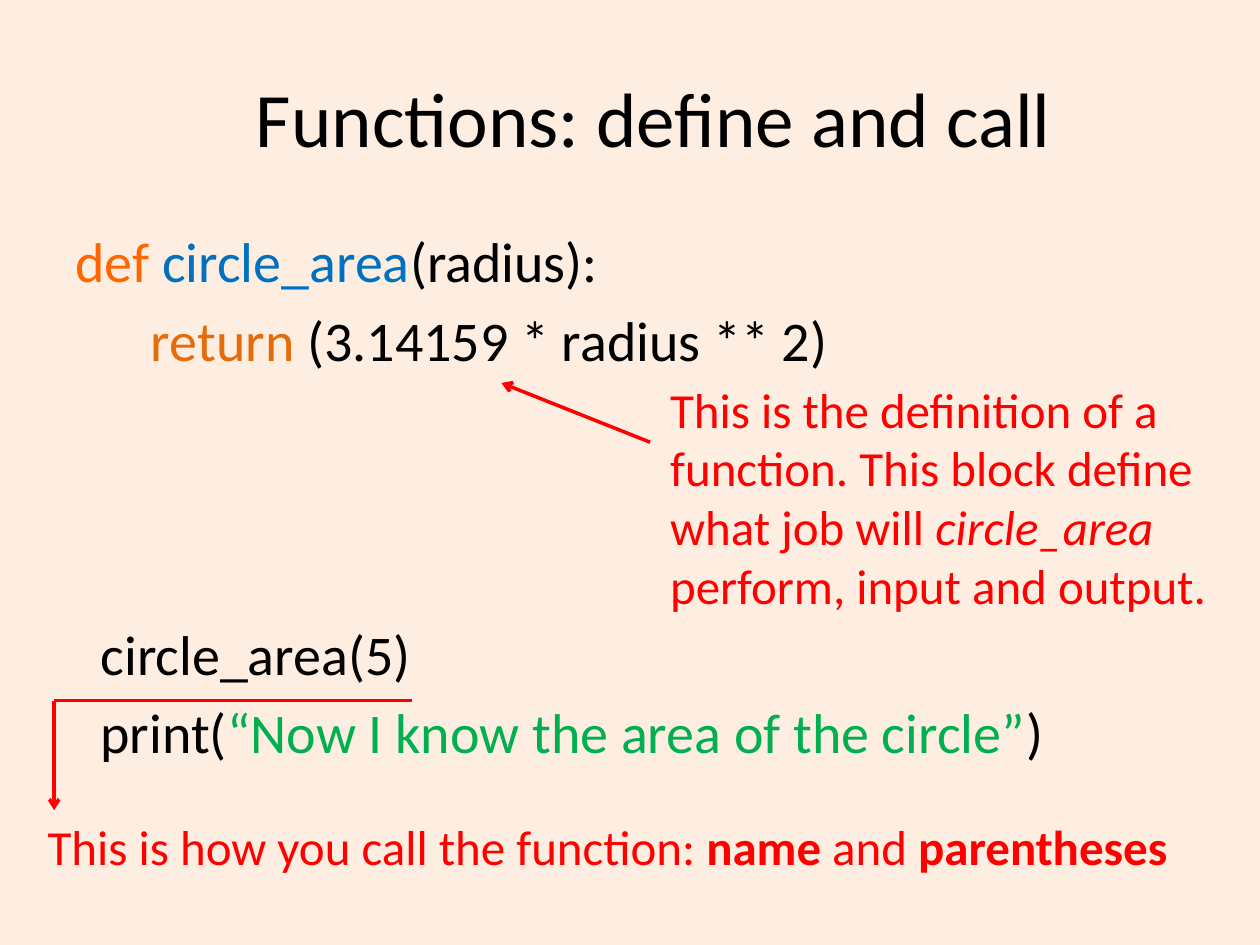
"""Build a slide on defining and calling a function."""
import pptx
import pptx.dml.color
import pptx.enum.shapes
import pptx.enum.text
import pptx.util
from dataclasses import dataclass
from lxml import etree

Inches = pptx.util.Inches
Pt = pptx.util.Pt
Align = pptx.enum.text.PP_ALIGN
Anchor = pptx.enum.text.MSO_ANCHOR
A = "{http://schemas.openxmlformats.org/drawingml/2006/main}"


@dataclass(frozen=True)
class Theme:
    font: str = "Calibri"
    ground: str = "FEEEE1"
    ink: str = "000000"
    define: str = "FF6600"
    keyword: str = "E46C0A"
    name: str = "0070C0"
    string: str = "00B050"
    note: str = "FF0000"
    title: int = 44
    code: int = 32
    small: int = 28
    line: int = 2


THEME = Theme()


def color(value):
    return pptx.dml.color.RGBColor.from_string(value)


def apply(target, formats):
    for key, value in formats.items():
        setattr(target, key, value)


def add_runs(para, parts, size):
    for text, tint, formats in parts:
        run = para.add_run()
        run.text = text
        apply(run.font, {"name": THEME.font, "size": Pt(size), **formats})
        run.font.color.rgb = color(tint)


def place(shape, box):
    apply(shape, dict(zip(("left", "top", "width", "height"), map(Inches, box))))


def add_title(slide, text, box):
    title = slide.shapes.title
    place(title, box)
    title.text_frame.vertical_anchor = Anchor.MIDDLE
    para = title.text_frame.paragraphs[0]
    para.alignment = Align.CENTER
    add_runs(para, [(text, THEME.ink, {})], THEME.title)


def add_text(slide, box, lines, size):
    frame = slide.shapes.add_textbox(*map(Inches, box)).text_frame
    frame.word_wrap = True
    for row, (indent, gap, parts) in enumerate(lines):
        para = frame.add_paragraph() if row else frame.paragraphs[0]
        apply(para, {"alignment": Align.LEFT, "space_before": Pt(gap)})
        para._p.get_or_add_pPr().set("marL", str(Inches(indent)))
        add_runs(para, parts, size)


def add_line(slide, start, end, arrow=False):
    kind = pptx.enum.shapes.MSO_CONNECTOR.STRAIGHT
    link = slide.shapes.add_connector(kind, *map(Inches, start + end))
    link.line.width = Pt(THEME.line)
    link.line.color.rgb = color(THEME.note)
    if arrow:
        etree.SubElement(link.line._get_or_add_ln(), A + "tailEnd", type="arrow")
    etree.SubElement(link._element.spPr, A + "effectLst")


def main():
    deck = pptx.Presentation()
    apply(deck, {"slide_width": Inches(10), "slide_height": Inches(7.5)})
    slide = deck.slides.add_slide(deck.slide_layouts[5])
    slide.background.fill.solid()
    slide.background.fill.fore_color.rgb = color(THEME.ground)

    add_title(slide, "Functions: define and call", (0.5, 0.3, 9.38, 1.25))
    code = [
        (0, 0, [("def ", THEME.define, {}), ("circle_area", THEME.name, {}),
                ("(radius):", THEME.ink, {})]),
        (0.6, 6.4, [("return ", THEME.keyword, {}),
                    ("(3.14159 * radius ** 2)", THEME.ink, {})]),
        (0.2, 141, [("circle_area(5)", THEME.ink, {})]),
        (0.2, 6.4, [("print(", THEME.ink, {}),
                    ("“Now I know the area of the circle”", THEME.string, {}),
                    (")", THEME.ink, {})]),
    ]
    add_text(slide, (0.5, 1.75, 9, 5.23), code, THEME.code)

    note = THEME.note
    define = [("This is the definition of a function. This block define "
               "what job will ", note, {}),
              ("circle_area", note, {"italic": True}),
              (" perform, input and output.", note, {})]
    add_text(slide, (5.22, 2.96, 4.58, 2.28), [(0, 0, define)], THEME.small)
    call = [("This is how you call the function: ", note, {}),
            ("name", note, {"bold": True}), (" and ", note, {}),
            ("parentheses", note, {"bold": True})]
    add_text(slide, (0.28, 6.43, 9.29, 0.79), [(0, 0, call)], THEME.small)

    corner = (0.43, 5.56)
    add_line(slide, (5.16, 3.51), (3.98, 3.04), arrow=True)
    add_line(slide, corner, (3.27, 5.56))
    add_line(slide, corner, (0.43, 6.43), arrow=True)
    deck.save("out.pptx")


if __name__ == "__main__":
    main()
